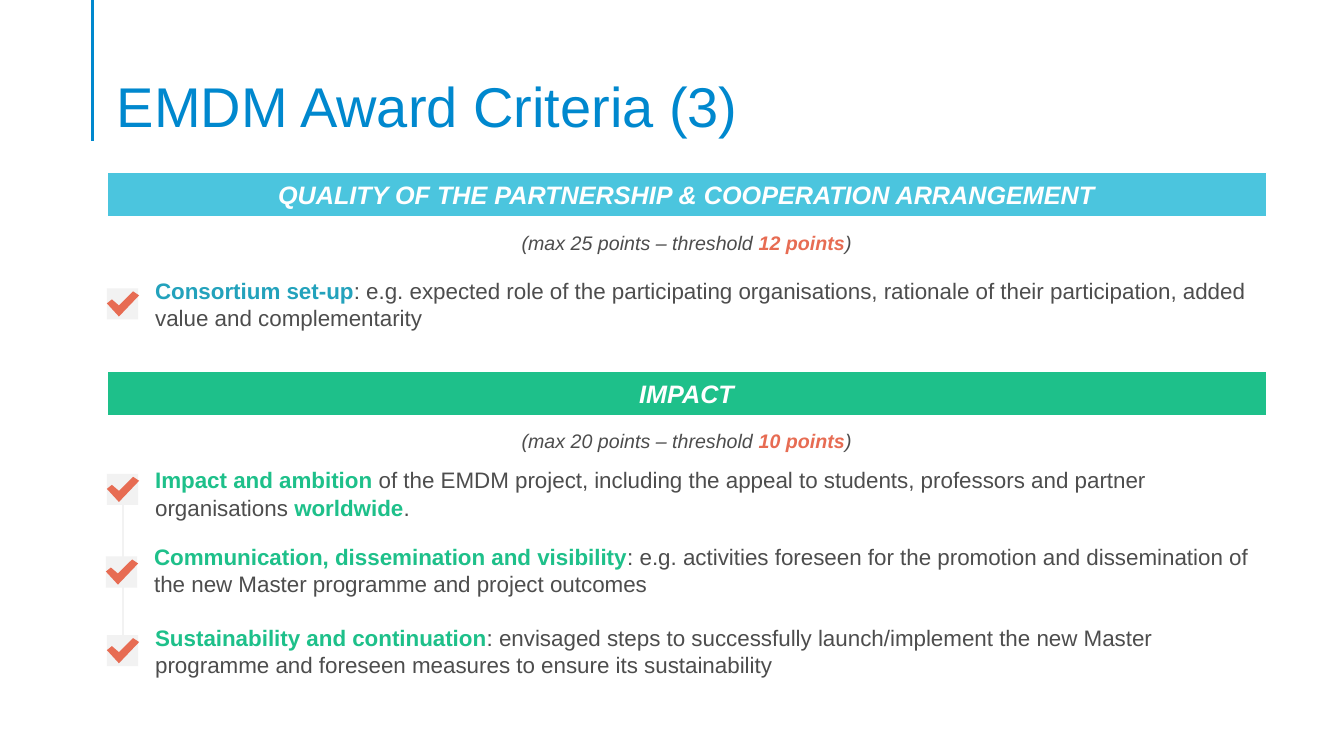
from lxml import etree
from pptx import Presentation
from pptx.dml.color import RGBColor
from pptx.enum.shapes import MSO_CONNECTOR, MSO_SHAPE
from pptx.enum.text import MSO_ANCHOR, MSO_AUTO_SIZE, PP_ALIGN
from pptx.oxml.ns import qn
from pptx.util import Inches, Pt

RECT, STRAIGHT = MSO_SHAPE.RECTANGLE, MSO_CONNECTOR.STRAIGHT
LEFT, CENTER = PP_ALIGN.LEFT, PP_ALIGN.CENTER
COLORS = {
    "blue": "0088CE", "cyan": "4BC5DE", "teal": "23A2BC", "green": "1EC08A",
    "coral": "E76C53", "text": "4D4D4D", "pale": "F2F2F2", "white": "FFFFFF",
}
RGB = {name: RGBColor.from_string(value) for name, value in COLORS.items()}
MARGIN, WIDTH = 1.06, 11.5

prs = Presentation()
prs.slide_width, prs.slide_height = Inches(13.33), Inches(7.5)
s = prs.slides.add_slide(prs.slide_layouts[5])


def add_runs(p, runs, size, italic=False):
    """Append (text, colour, bold[, size, font]) runs to a paragraph."""
    for text, color, bold, *special in runs:
        r = p.add_run()
        r.text = text
        run_size, font = special or (size, "Arial")
        r.font.size, r.font.name = Pt(run_size), font
        r.font.bold, r.font.italic = bold, italic
        r.font.color.rgb = RGB[color]


def add_text(left, top, width, height, runs, size, align=LEFT, italic=False):
    tb = s.shapes.add_textbox(Inches(left), Inches(top), Inches(width), Inches(height))
    tf = tb.text_frame
    tf.word_wrap = True
    tf.auto_size = MSO_AUTO_SIZE.SHAPE_TO_FIT_TEXT
    p = tf.paragraphs[0]
    p.alignment = align
    add_runs(p, runs, size, italic)


# Title
title = s.shapes.title
title.left, title.top = Inches(MARGIN), Inches(0.53)
title.width, title.height = Inches(WIDTH), Inches(0.86)
tf = title.text_frame
tf.text = "EMDM Award Criteria (3)"
tf.vertical_anchor = MSO_ANCHOR.BOTTOM
tf.margin_bottom = 0
p = tf.paragraphs[0]
p.alignment, p.line_spacing = LEFT, 0.9
p.font.size, p.font.name = Pt(40), "Arial"
p.font.color.rgb = RGB["blue"]

# Title rule and the line joining the impact check marks
for x, top, bottom, color, weight in [
    (0.92, 0, 1.4, "blue", 2.25),
    (1.22, 4.94, 6.61, "pale", 1.5),
]:
    line = s.shapes.add_connector(STRAIGHT, Inches(x), Inches(top), Inches(x), Inches(bottom))
    line.line.color.rgb = RGB[color]
    line.line.width = Pt(weight)
    etree.SubElement(line._element.spPr, qn("a:effectLst"))

# Section banners with their scoring notes
sections = [
    (1.71, "QUALITY OF THE PARTNERSHIP & COOPERATION ARRANGEMENT", "cyan", 25, 12),
    (3.68, "IMPACT", "green", 20, 10),
]
for top, heading, color, maximum, threshold in sections:
    banner = s.shapes.add_shape(RECT, Inches(MARGIN), Inches(top), Inches(WIDTH), Inches(0.44))
    banner.shadow.inherit = False
    banner.fill.solid()
    banner.fill.fore_color.rgb = RGB[color]
    banner.line.color.rgb = RGB["white"]
    banner.line.width = Pt(1)
    tf = banner.text_frame
    tf.vertical_anchor = MSO_ANCHOR.MIDDLE
    tf.paragraphs[0].alignment = CENTER
    add_runs(tf.paragraphs[0], [(heading, "white", True)], 18, italic=True)
    note = [
        (f"(max {maximum} points – threshold ", "text", False),
        (f"{threshold} points", "coral", True),
        (")", "text", False),
    ]
    add_text(MARGIN, top + 0.53, WIDTH, 0.34, note, 14, CENTER, italic=True)

# Criteria: text left and top, check box left and top, runs
criteria = [
    (1.44, 2.7, 1.06, 2.86, [
        ("Consortium set-up", "teal", True),
        (": e.g. expected role of the participating organisations, rationale of "
         "their participation, added value and complementarity", "text", False),
    ]),
    (1.44, 4.55, 1.06, 4.7, [
        ("Impact and ambition ", "green", True),
        ("of the EMDM project,", "text", False),
        (" ", "text", False, 18, "Calibri"),
        ("including the appeal to students, professors and partner organisations ",
         "text", False),
        ("worldwide", "green", True),
        (".", "text", False),
    ]),
    (1.43, 5.34, 1.05, 5.52, [
        ("Communication, dissemination and visibility", "green", True),
        (": e.g. activities foreseen for the promotion and dissemination of the "
         "new Master programme and project outcomes", "text", False),
    ]),
    (1.44, 6.14, 1.06, 6.3, [
        ("Sustainability and continuation", "green", True),
        (": envisaged steps to successfully launch/implement the new Master "
         "programme and foreseen measures to ensure its sustainability", "text", False),
    ]),
]
# Check mark outline, relative to the top left of its box
CHECK = [(0.12, 0.28), (0, 0.15), (0.05, 0.11), (0.12, 0.17), (0.26, 0.03), (0.32, 0.07)]

for left, top, box_left, box_top, runs in criteria:
    add_text(left, top, 11.12, 0.64, runs, 16)
    box = s.shapes.add_shape(RECT, Inches(box_left), Inches(box_top), Inches(0.31), Inches(0.31))
    points = [(Inches(box_left + x), Inches(box_top + y)) for x, y in CHECK]
    outline = s.shapes.build_freeform(*points[0])
    outline.add_line_segments(points[1:], close=True)
    check = outline.convert_to_shape()
    for shape, color in [(box, "pale"), (check, "coral")]:
        shape.shadow.inherit = False
        shape.fill.solid()
        shape.fill.fore_color.rgb = RGB[color]
        shape.line.fill.background()

prs.save("out.pptx")
